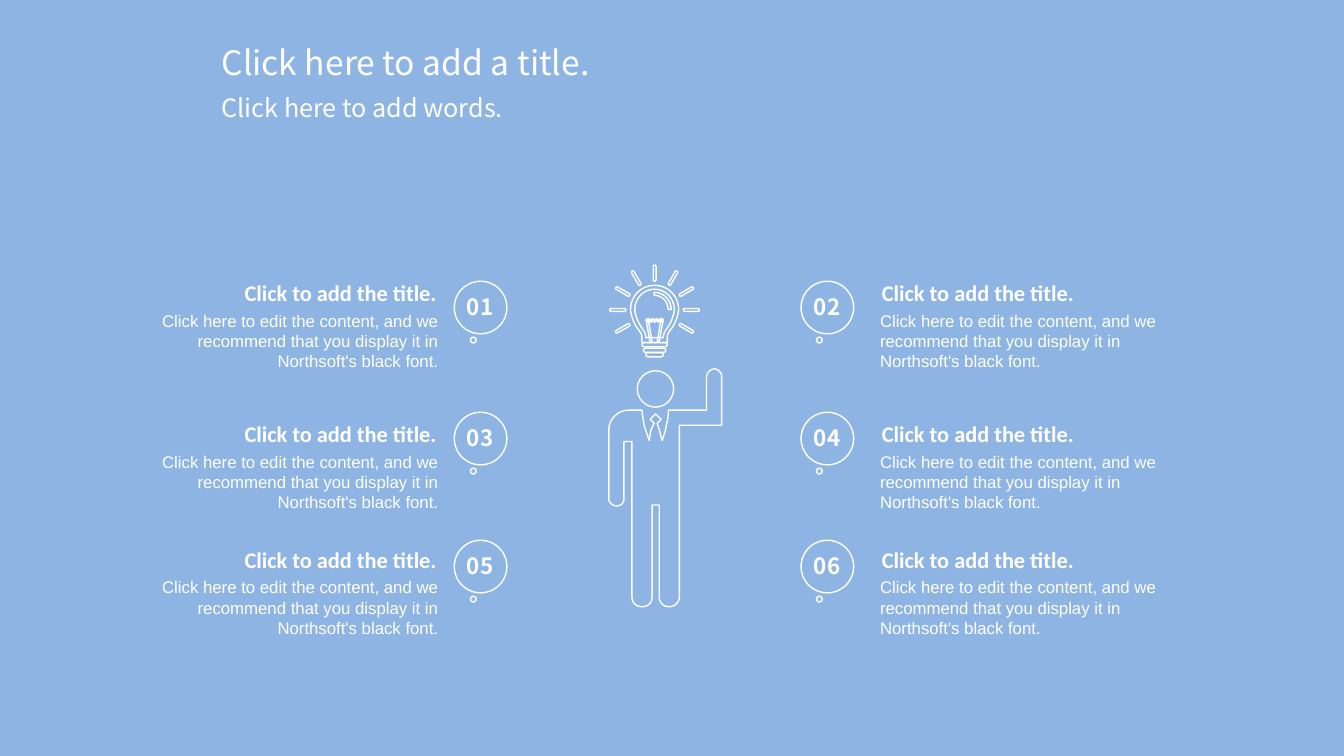
from dataclasses import dataclass
from math import cos, pi, radians, sin

from pptx import Presentation
from pptx.dml.color import RGBColor
from pptx.enum.shapes import MSO_SHAPE
from pptx.enum.text import MSO_ANCHOR, MSO_AUTO_SIZE, PP_ALIGN
from pptx.oxml.ns import qn
from pptx.oxml.xmlchemy import OxmlElement
from pptx.shapes.autoshape import Shape
from pptx.slide import Slide
from pptx.util import Pt

Point = tuple[float, float]


@dataclass(frozen=True)
class TextStyle:
    size: float
    font: str
    bold: bool = False
    spacing: int = 0  # hundredths of a point


@dataclass(frozen=True)
class Theme:
    background: RGBColor = RGBColor(0x8E, 0xB4, 0xE3)
    ink: RGBColor = RGBColor(0xFF, 0xFF, 0xFF)
    stroke: float = 1
    title: TextStyle = TextStyle(24, "Noto Sans CJK SC")
    subtitle: TextStyle = TextStyle(18, "Noto Sans CJK SC")
    number: TextStyle = TextStyle(16, "Noto Sans CJK SC", True, 30)
    heading: TextStyle = TextStyle(16, "Calibri", True)
    body: TextStyle = TextStyle(12, "Arial")


@dataclass(frozen=True)
class Column:
    disc_left: float
    heading_left: float
    heading_width: float
    body_left: float
    align: PP_ALIGN


@dataclass(frozen=True)
class Row:
    disc_top: float
    heading_top: float


THEME = Theme()
HEADING = "Click to add the title."
BODY = ("Click here to edit the content, and we recommend that "
        "you display it in Northsoft's black font.")
COLUMNS = [
    Column(324.5, 128.2, 190.8, 96.5, PP_ALIGN.RIGHT),
    Column(572.2, 622.8, 187.9, 628.6, PP_ALIGN.LEFT),
]
ROWS = [Row(200.9, 195.8), Row(294.5, 296.6), Row(385.9, 386.4)]
DISC = 37.6
BULB_X, BULB_Y = 467.6, 221.4

# Outlines: two numbers are a corner, six are a Bézier curve
MAN = [
    (515.5, 267.8), (514.8, 265.7, 512.6, 263.5, 510.5, 263.5),
    (507.6, 263.5, 504.7, 266.4, 504.7, 269.3), (504.7, 293), (477.4, 293),
    (477.4, 294.5, 477.4, 299.5, 475.9, 303.8),
    (475.9, 306.7, 473, 314.6, 473, 314.6),
    (470.9, 306.7), (469.4, 302.4), (472.3, 299.5), (468.2, 295.7),
    (464.4, 299.5), (467.3, 302.4), (465.1, 306.7), (463.7, 314.6),
    (460.1, 303.8), (459.4, 299.5, 458.6, 294.5, 458.6, 293), (448.6, 293),
    (441.4, 293, 434.9, 299.5, 434.9, 306.7), (434.9, 356.4),
    (434.9, 359.3, 437.8, 361.4, 440.6, 361.4),
    (443.5, 361.4, 445.7, 359.3, 445.7, 356.4),
    (445.7, 315.4), (451.4, 315.4), (451.4, 426.2),
    (451.4, 430.6, 454.3, 433.4, 458.6, 433.4),
    (463, 433.4, 465.8, 430.6, 465.8, 426.2),
    (465.8, 360.7), (470.9, 360.7), (470.9, 426.2),
    (470.9, 430.6, 473.8, 433.4, 478.1, 433.4),
    (481.7, 433.4, 485.3, 430.6, 485.3, 426.2), (485.3, 303.8), (515.5, 303.8),
]
GLASS_OUTER_HALF = [
    (467.6, 203.8), (477.1, 203.8, 484.8, 211.5, 484.8, 221),
    (484.8, 221, 484.6, 229, 478.1, 236.9),
    (476.6, 238.3, 476.6, 241.9, 476.6, 242.6),
    (477.4, 243.4, 476.6, 244.8, 475.2, 244.8),
]
GLASS_INNER_HALF = [
    (467.6, 206.6), (475.4, 206.6, 481.7, 213.1, 481.7, 221),
    (481.7, 221, 481.7, 227.5, 475.9, 235.4),
    (475.2, 236.2, 474.1, 238.3, 473.8, 240.5), (473.8, 241.2),
]
FILAMENT_POST = [(469.4, 244.1), (472.3, 227.5), (473.8, 228.2), (470.9, 244.1)]


def flatten(outline: list[tuple[float, ...]], steps: int = 8) -> list[Point]:
    points: list[Point] = []
    for part in outline:
        if len(part) == 2:
            points.append(part)
            continue
        controls = [points[-1], part[:2], part[2:4], part[4:]]
        for step in range(1, steps + 1):
            t = step / steps
            weights = ((1 - t) ** 3, 3 * t * (1 - t) ** 2, 3 * t * t * (1 - t), t ** 3)
            points.append(tuple(sum(w * c[axis] for w, c in zip(weights, controls))
                                for axis in (0, 1)))
    return points


def mirror(points: list[Point]) -> list[Point]:
    return [(2 * BULB_X - x, y) for x, y in reversed(points)]


def arc(x: float, y: float, radius: float, start: float, end: float) -> list[Point]:
    angles = [radians(start + (end - start) * step / 10) for step in range(11)]
    return [(x + radius * cos(a), y + radius * sin(a)) for a in angles]


def capsule(x: float, y: float, angle: float, near: float, far: float,
            width: float) -> list[Point]:
    """Round-ended bar lying on a line through (x, y)."""
    reach = width / 2
    turn = radians(angle)
    ends = [(far - reach, angle - 90), (near + reach, angle + 90)]
    return [point for distance, start in ends
            for point in arc(x + distance * cos(turn), y + distance * sin(turn),
                             reach, start, start + 180)]


def style_outline(shape: Shape) -> None:
    shape.shadow.inherit = False
    shape.fill.background()
    shape.line.color.rgb = THEME.ink
    shape.line.width = Pt(THEME.stroke)


def add_outline(page: Slide, *contours: list[Point]) -> None:
    scaled = [[(Pt(x), Pt(y)) for x, y in contour] for contour in contours]
    builder = page.shapes.build_freeform(*scaled[0][0], scale=1.0)
    for index, contour in enumerate(scaled):
        if index:
            builder.move_to(*contour[0])
        builder.add_line_segments(contour[1:], close=True)
    style_outline(builder.convert_to_shape())


def add_circle(page: Slide, left: float, top: float, size: float) -> None:
    style_outline(page.shapes.add_shape(MSO_SHAPE.OVAL, Pt(left), Pt(top), Pt(size), Pt(size)))


def add_text(page: Slide, text: str, left: float, top: float, width: float, height: float,
             style: TextStyle, align: PP_ALIGN = PP_ALIGN.LEFT, inset: bool = True,
             middle: bool = False) -> None:
    box = page.shapes.add_textbox(Pt(left), Pt(top), Pt(width), Pt(height))
    frame = box.text_frame
    frame.word_wrap = True
    frame.auto_size = MSO_AUTO_SIZE.NONE if middle else MSO_AUTO_SIZE.SHAPE_TO_FIT_TEXT
    frame.vertical_anchor = MSO_ANCHOR.MIDDLE if middle else MSO_ANCHOR.TOP
    if not inset:
        frame.margin_left = frame.margin_right = frame.margin_top = frame.margin_bottom = 0
    para = frame.paragraphs[0]
    para.text = text
    para.alignment = align
    font = para.font
    font.size, font.name, font.bold = Pt(style.size), style.font, style.bold
    font.color.rgb = THEME.ink
    # East Asian font and letter spacing
    properties = para._p.pPr.find(qn("a:defRPr"))
    properties.set("spc", str(style.spacing))
    east_asian = OxmlElement("a:ea")
    east_asian.set("typeface", style.font)
    properties.append(east_asian)


def add_bulb(page: Slide) -> None:
    # Glass, highlight and filament
    for_glass = [flatten(half) for half in (GLASS_OUTER_HALF, GLASS_INNER_HALF)]
    add_outline(page, *[half + mirror(half) for half in for_glass])
    add_outline(page, arc(467.3, 221, 12.2, -90, 0) + arc(467.3, 221, 10, 0, -90))
    add_outline(page, FILAMENT_POST)
    add_outline(page, mirror(FILAMENT_POST))
    wave = [(462.2 + 10.8 * step / 32, 228.25 + 0.75 * cos(step * pi / 4))
            for step in range(33)]
    add_outline(page, wave + [(x, y + 1.2) for x, y in reversed(wave)])
    # Rays and screw base
    for angle in range(-210, 31, 30):
        add_outline(page, capsule(BULB_X, BULB_Y, angle, 20.5, 32, 2))
    for y, width in [(246.2, 18), (250.2, 16), (253.4, 12.4)]:
        add_outline(page, capsule(BULB_X, y, 0, -width / 2, width / 2, 3))


def add_item(page: Slide, number: int, column: Column, row: Row) -> None:
    add_circle(page, column.disc_left, row.disc_top, DISC)
    add_text(page, f"{number:02d}。", column.disc_left + 3.8, row.disc_top + 8.6, 29.5, 19.4,
             THEME.number, PP_ALIGN.CENTER, inset=False)
    add_text(page, HEADING, column.heading_left, row.heading_top, column.heading_width, 26,
             THEME.heading, column.align, middle=True)
    add_text(page, BODY, column.body_left, row.heading_top + 25.8, 216.7, 28.8,
             THEME.body, column.align, inset=False)


def main() -> None:
    deck = Presentation()
    deck.slide_width, deck.slide_height = Pt(960), Pt(540)
    page = deck.slides.add_slide(deck.slide_layouts[6])
    page.background.fill.solid()
    page.background.fill.fore_color.rgb = THEME.background
    # Title block
    add_text(page, "Click here to add a title.", 151.2, 26.6, 285.8, 36, THEME.title,
             PP_ALIGN.JUSTIFY)
    add_text(page, "Click here to add words.", 151.2, 62.6, 285.8, 28.8, THEME.subtitle)
    # Man with the idea
    add_circle(page, 455.2, 264.8, 26)
    add_outline(page, flatten(MAN))
    add_bulb(page)
    # Numbered items, left to right and top to bottom
    for row_index, row in enumerate(ROWS):
        for column_index, column in enumerate(COLUMNS):
            add_item(page, 2 * row_index + column_index + 1, column, row)
    deck.save("out.pptx")


if __name__ == "__main__":
    main()
